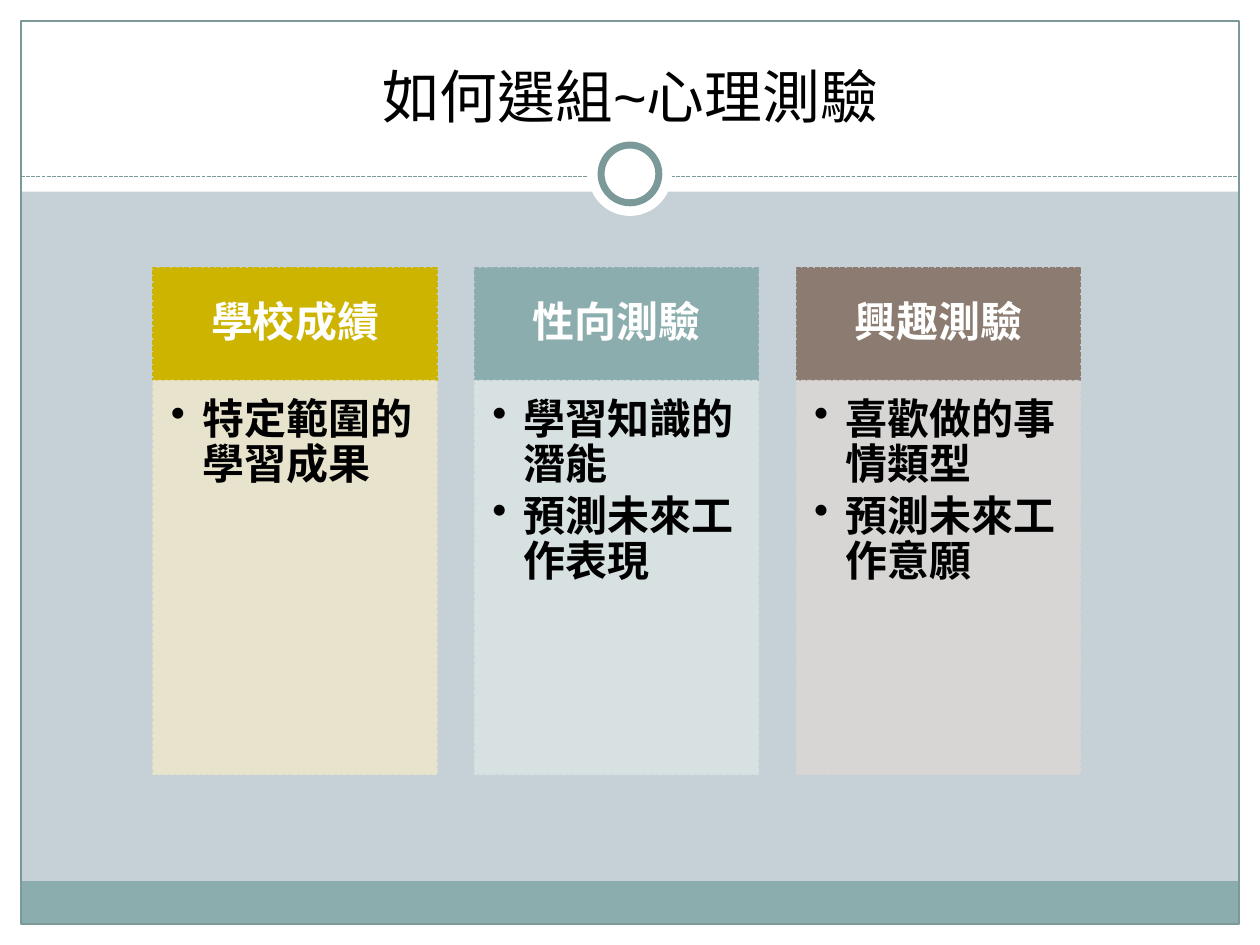
import lxml.etree
import pptx
import pptx.dml.color
import pptx.enum.dml
import pptx.enum.lang
import pptx.enum.shapes
import pptx.enum.text
import pptx.oxml.ns
import pptx.util

Pt = pptx.util.Pt
SHAPE = pptx.enum.shapes.MSO_SHAPE
ANCHOR = pptx.enum.text.MSO_ANCHOR
ALIGN = pptx.enum.text.PP_ALIGN

# Content: heading, bullets, heading colour, body colour
TITLE = "如何選組~心理測驗"
COLUMNS = [
    ("學校成績", ["特定範圍的學習成果"], "CCB400", "ECE5CC"),
    ("性向測驗", ["學習知識的潛能", "預測未來工作表現"], "8CADAE", "DAE3E3"),
    ("興趣測驗", ["喜歡做的事情類型", "預測未來工作意願"], "8C7B70", "DAD7D5"),
]


class Theme:
    font = "Arial"
    title_size, card_size = 33, 24
    background, paper, ink = "C5D1D7", "FFFFFF", "000000"
    band, rule = "8CADAE", "7C999A"
    hairline, card_line, ring_line = 0.75, 0.9, 4
    body_opacity = 90


# Layout in points
WIDTH, HEIGHT = 720, 540
MARGIN = 12
HEADER_HEIGHT, BAND_HEIGHT = 109.5, 24.5
RULE_TOP, RING_CENTRE = 100.8, 99.4
CARD_LEFT, CARD_TOP, CARD_WIDTH, CARD_STEP = 87.6, 153, 162, 183.8
HEADING_HEIGHT, BODY_HEIGHT = 64.5, 225
INDENT = 18


def rgb(value):
    return pptx.dml.color.RGBColor.from_string(value)


def add_child(parent, tag, **attributes):
    child = lxml.etree.SubElement(parent, pptx.oxml.ns.qn(tag))
    for name, value in attributes.items():
        child.set(name, str(value))
    return child


def set_opacity(fill_format, percent):
    """Make a solid fill, of a shape or of its line, partly transparent."""
    colour = fill_format._xPr.find(".//" + pptx.oxml.ns.qn("a:srgbClr"))
    add_child(colour, "a:alpha", val=percent * 1000)


def style_line(line, colour, width, dashed=False):
    line.color.rgb = rgb(colour)
    line.width = Pt(width)
    if dashed:
        line.dash_style = pptx.enum.dml.MSO_LINE.SQUARE_DOT


def add_box(page, box, fill=None, line=None, width=0, dashed=False,
            kind=SHAPE.RECTANGLE):
    shape = page.shapes.add_shape(kind, *(Pt(length) for length in box))
    shape.shadow.inherit = False
    if fill:
        shape.fill.solid()
        shape.fill.fore_color.rgb = rgb(fill)
    else:
        shape.fill.background()
    if line:
        style_line(shape.line, line, width, dashed)
    else:
        shape.line.fill.background()
    return shape


def add_circle(page, diameter, **style):
    box = (WIDTH / 2 - diameter / 2, RING_CENTRE - diameter / 2, diameter, diameter)
    return add_box(page, box, kind=SHAPE.OVAL, **style)


def write(shape, lines, size, colour, anchor, insets, bold=False, bullets=False):
    frame = shape.text_frame
    frame.word_wrap = True
    frame.vertical_anchor = anchor
    (frame.margin_left, frame.margin_top,
     frame.margin_right, frame.margin_bottom) = (Pt(inset) for inset in insets)
    for number, text in enumerate(lines):
        para = frame.add_paragraph() if number else frame.paragraphs[0]
        para.alignment = ALIGN.LEFT if bullets else ALIGN.CENTER
        if bold:
            para.line_spacing = 0.9
        if bullets:
            para.space_after = Pt(size * 0.15)
            properties = para._p.get_or_add_pPr()
            properties.set("marL", str(Pt(INDENT)))
            properties.set("indent", str(-Pt(INDENT)))
            add_child(properties, "a:buChar", char="•")
        span = para.add_run()
        span.text = text
        span.font.name = Theme.font
        span.font.size = Pt(size)
        span.font.bold = bold
        span.font.color.rgb = rgb(colour)
        span.font.language_id = pptx.enum.lang.MSO_LANGUAGE_ID.TRADITIONAL_CHINESE


def add_frame(page):
    # White header and margins, coloured footer band
    for box in [
        (0, HEIGHT - MARGIN, WIDTH, MARGIN),
        (0, 0, WIDTH, HEADER_HEIGHT),
        (0, 0, MARGIN, HEIGHT),
        (WIDTH - MARGIN, 0, MARGIN, HEIGHT),
    ]:
        add_box(page, box, Theme.paper)
    inner_width, inner_height = WIDTH - 2 * MARGIN, HEIGHT - 2 * MARGIN
    band_top = HEIGHT - MARGIN - BAND_HEIGHT
    add_box(page, (MARGIN, band_top, inner_width, BAND_HEIGHT), Theme.band)
    add_box(page, (MARGIN, MARGIN, inner_width, inner_height),
            line=Theme.rule, width=Theme.hairline)

    # Dashed rule with the ring on it
    rule = page.shapes.add_connector(
        pptx.enum.shapes.MSO_CONNECTOR.STRAIGHT,
        Pt(MARGIN), Pt(RULE_TOP), Pt(WIDTH - MARGIN), Pt(RULE_TOP))
    style_line(rule.line, Theme.rule, Theme.hairline, dashed=True)
    add_child(rule._element.spPr, "a:effectLst")
    add_circle(page, 48, fill=Theme.paper)
    add_circle(page, 33, fill=Theme.paper, line=Theme.rule, width=Theme.ring_line)


def add_card(page, left, heading, bullets, heading_fill, body_fill):
    head = add_box(page, (left, CARD_TOP, CARD_WIDTH, HEADING_HEIGHT),
                   heading_fill, heading_fill, Theme.card_line, dashed=True)
    write(head, [heading], Theme.card_size, Theme.paper, ANCHOR.MIDDLE,
          (13.5, 8, 13.5, 8), bold=True)
    body = add_box(page, (left, CARD_TOP + HEADING_HEIGHT, CARD_WIDTH, BODY_HEIGHT),
                   body_fill, body_fill, Theme.card_line, dashed=True)
    for fill_format in (body.fill, body.line.fill):
        set_opacity(fill_format, Theme.body_opacity)
    write(body, bullets, Theme.card_size, Theme.ink, ANCHOR.TOP,
          (10, 10, 13.5, 15), bold=True, bullets=True)


def main():
    deck = pptx.Presentation()
    deck.slide_width, deck.slide_height = Pt(WIDTH), Pt(HEIGHT)
    page = deck.slides.add_slide(deck.slide_layouts[6])
    page.background.fill.solid()
    page.background.fill.fore_color.rgb = rgb(Theme.background)

    add_frame(page)

    # Title
    title = page.shapes.add_textbox(Pt(24), Pt(18), Pt(WIDTH - 48), Pt(60))
    write(title, [TITLE], Theme.title_size, Theme.ink, ANCHOR.BOTTOM,
          (7.2, 3.6, 7.2, 3.6))

    # Three cards
    for number, card in enumerate(COLUMNS):
        add_card(page, CARD_LEFT + number * CARD_STEP, *card)

    deck.save("out.pptx")


if __name__ == "__main__":
    main()
